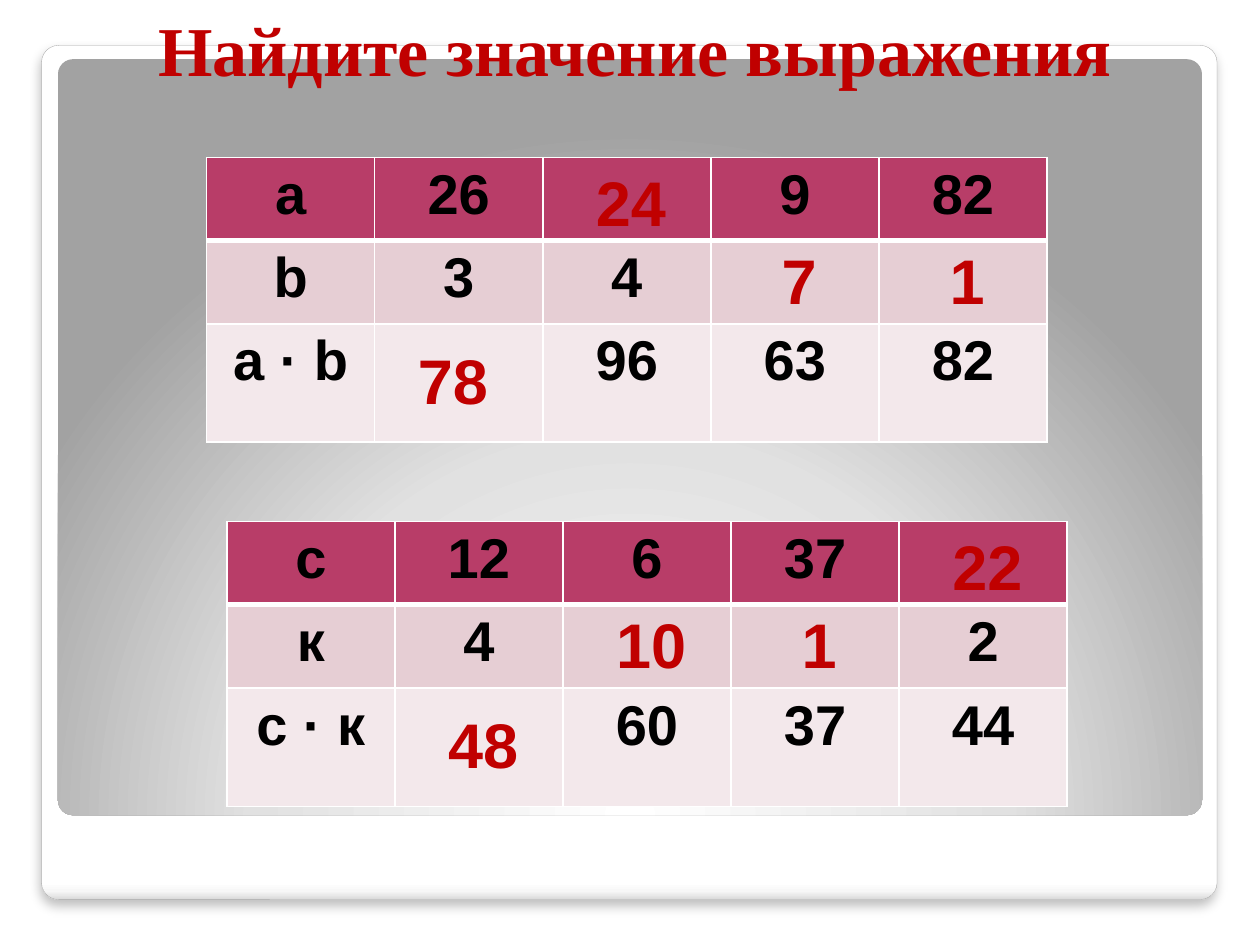
import dataclasses

import pptx
import pptx.dml.color
import pptx.enum.shapes
import pptx.enum.text
import pptx.oxml
import pptx.oxml.ns
import pptx.util

RGB = pptx.dml.color.RGBColor
WHITE, BLACK, RED = RGB(255, 255, 255), RGB(0, 0, 0), RGB(0xC0, 0, 0)
EDGE_GREY = RGB(0xA4, 0xA4, 0xA4)
ROW_FILLS = (RGB(0xB8, 0x3D, 0x68), RGB(0xE6, 0xCE, 0xD4), RGB(0xF3, 0xE8, 0xEB))
FRAME_STOPS = ((0, WHITE), (98, WHITE), (99, RGB(0xF7, 0xF7, 0xF7)), (100, RGB(0xDA, 0xDA, 0xDA)))
PANEL_STOPS = ((0, WHITE), (55, RGB(0xE1, 0xE1, 0xE1)), (100, RGB(0xA2, 0xA2, 0xA2)))

TITLE_FONT = {"name": "Times New Roman", "size": pptx.util.Pt(40), "bold": True}
CELL_FONT = {"name": "Arial", "size": pptx.util.Pt(32), "bold": True}
ANSWER_FONT = {"name": "Arial", "size": pptx.util.Pt(36), "bold": True}

ROW_HEIGHTS = (0.66, 0.66, 0.94)
ANSWER_TOPS = (0, 0.62, 1.41)  # from the top of the table, by row
ANSWER_INSET = 0.31  # from the left of the column
ANSWER_SIZE = (0.78, 0.71)


@dataclasses.dataclass
class Answer:
    """A found value, set over an empty table cell."""
    text: str
    shift: float = 0


PRODUCT_AB = (
    ("а", "26", Answer("24"), "9", "82"),
    ("b", "3", "4", Answer("7"), Answer("1")),
    ("a · b", Answer("78", -0.08), "96", "63", "82"),
)
PRODUCT_CK = (
    ("с", "12", "6", "37", Answer("22")),
    ("к", "4", Answer("10"), Answer("1"), "2"),
    ("с · к", Answer("48"), "60", "37", "44"),
)


def inches(*lengths):
    return [pptx.util.Inches(length) for length in lengths]


def xml(text):
    """Parse one element, declaring the drawing namespace on its first tag."""
    name, rest = text[1:].split(" ", 1)
    return pptx.oxml.parse_xml(f"<{name} {pptx.oxml.ns.nsdecls('a')} {rest}")


def write(frame, text, font, color):
    """Put one centred, formatted line in a text frame."""
    para = frame.paragraphs[0]
    para.alignment = pptx.enum.text.PP_ALIGN.CENTER
    span = para.add_run()
    span.text = text
    for key, value in font.items():
        setattr(span.font, key, value)
    span.font.color.rgb = color


def add_label(page, box, text, font):
    label = page.shapes.add_textbox(*inches(*box))
    label.text_frame.word_wrap = True
    label.text_frame.auto_size = pptx.enum.text.MSO_AUTO_SIZE.SHAPE_TO_FIT_TEXT
    write(label.text_frame, text, font, RED)


def add_rounded(page, box, stops, direction):
    """Add a rounded rectangle with a gradient of any number of stops."""
    shape = page.shapes.add_shape(
        pptx.enum.shapes.MSO_SHAPE.ROUNDED_RECTANGLE, *inches(*box))
    shape.adjustments[0] = 0.02
    shape.shadow.inherit = False
    shape.line.fill.background()
    shape.fill.background()
    marks = "".join(f'<a:gs pos="{place * 1000}"><a:srgbClr val="{color}"/></a:gs>'
                    for place, color in stops)
    properties = shape._element.spPr
    plain = properties.find(pptx.oxml.ns.qn("a:noFill"))
    properties.replace(plain, xml(
        f'<a:gradFill rotWithShape="1"><a:gsLst>{marks}</a:gsLst>{direction}</a:gradFill>'))
    return shape


def add_background(page, box):
    """White frame with a soft shadow, and the grey panel inside it."""
    left, top, width, height = box
    frame = add_rounded(page, box, FRAME_STOPS, '<a:lin ang="5400000" scaled="0"/>')
    frame.line.color.rgb = EDGE_GREY
    frame.line.width = pptx.util.Pt(0.16)
    effects = frame._element.spPr.find(pptx.oxml.ns.qn("a:effectLst"))
    effects.append(xml(
        '<a:outerShdw blurRad="76200" dist="50800" dir="5400000" rotWithShape="0">'
        '<a:srgbClr val="000000"><a:alpha val="25000"/></a:srgbClr></a:outerShdw>'))
    add_rounded(page, (left + 0.13, top + 0.11, width - 0.25, height - 0.78), PANEL_STOPS,
                '<a:path path="circle"><a:fillToRect l="50000" t="175000" '
                'r="50000" b="-75000"/></a:path>')


def set_borders(cell, row):
    """White borders, thicker under the header row."""
    widths = {"L": 1, "R": 1, "T": 3 if row == 1 else 1, "B": 3 if row == 0 else 1}
    properties = cell._tc.get_or_add_tcPr()
    for place, (side, points) in enumerate(widths.items()):
        properties.insert(place, xml(
            f'<a:ln{side} w="{pptx.util.Pt(points)}"><a:solidFill>'
            f'<a:srgbClr val="{WHITE}"/></a:solidFill></a:ln{side}>'))


def add_product_table(page, box, rows):
    """Table of factors and products, with the answers over its gaps."""
    left, top, width, height = box
    column_width = width / len(rows[0])
    table = page.shapes.add_table(len(rows), len(rows[0]), *inches(*box)).table
    for column in table.columns:
        column.width = pptx.util.Inches(column_width)
    for row, values in enumerate(rows):
        table.rows[row].height = pptx.util.Inches(ROW_HEIGHTS[row])
        for column, value in enumerate(values):
            cell = table.cell(row, column)
            cell.fill.solid()
            cell.fill.fore_color.rgb = ROW_FILLS[row]
            set_borders(cell, row)
            if isinstance(value, Answer):
                answer_left = left + column * column_width + ANSWER_INSET + value.shift
                add_label(page, (answer_left, top + ANSWER_TOPS[row], *ANSWER_SIZE),
                          value.text, ANSWER_FONT)
            else:
                write(cell.text_frame, value, CELL_FONT, BLACK)


def main():
    deck = pptx.Presentation()
    deck.slide_width, deck.slide_height = inches(10, 7.5)
    page = deck.slides.add_slide(deck.slide_layouts[6])
    add_background(page, (0.33, 0.36, 9.33, 6.78))
    add_label(page, (0.86, 0, 8.36, 0.77), "Найдите значение выражения", TITLE_FONT)
    table_size = (6.67, sum(ROW_HEIGHTS))
    add_product_table(page, (1.64, 1.25, *table_size), PRODUCT_AB)
    add_product_table(page, (1.8, 4.14, *table_size), PRODUCT_CK)
    deck.save("out.pptx")


if __name__ == "__main__":
    main()
